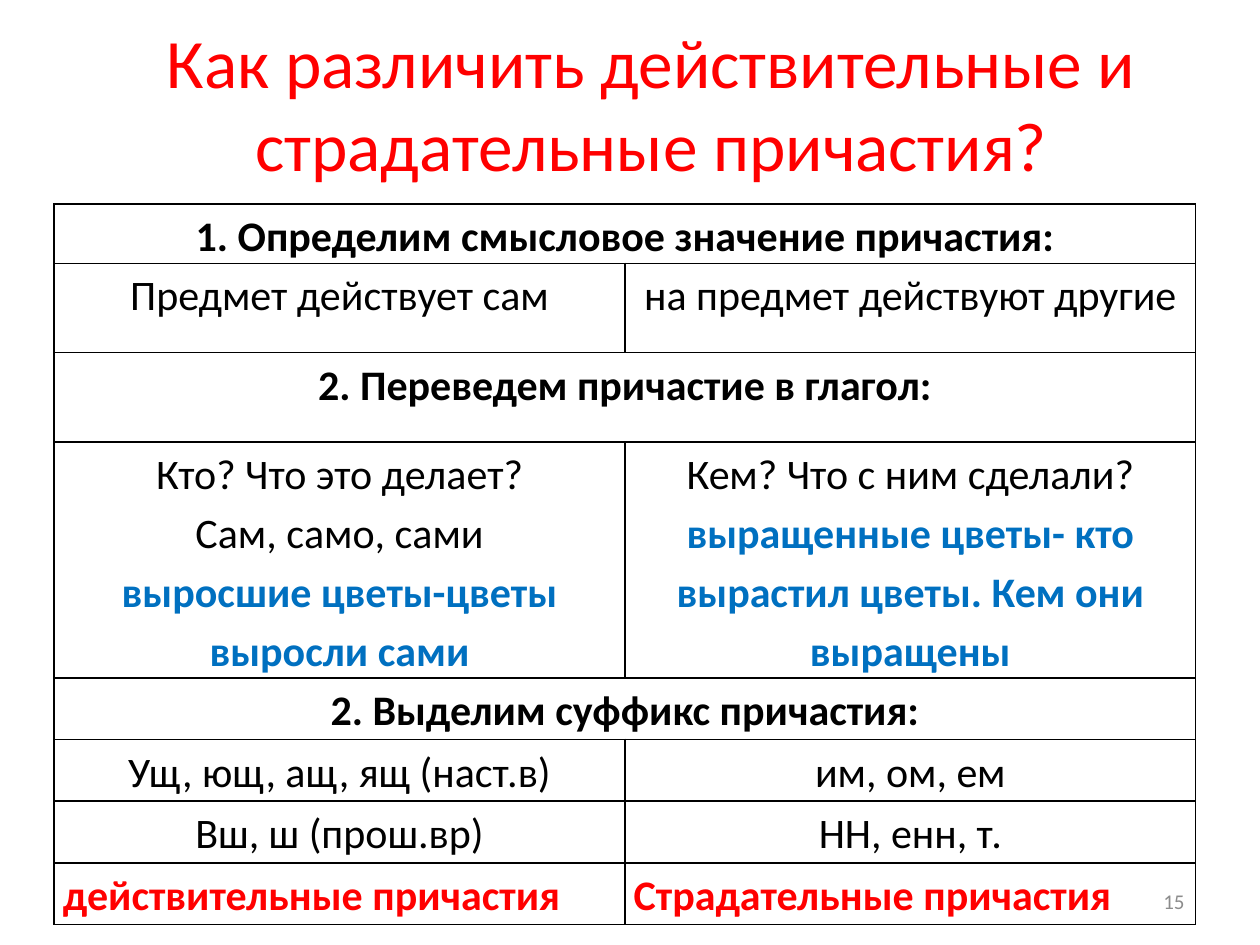
from lxml.etree import SubElement
from pptx import Presentation
from pptx.dml.color import RGBColor
from pptx.enum.text import MSO_ANCHOR, PP_ALIGN
from pptx.oxml.ns import qn
from pptx.util import Inches, Pt

BLACK, RED, BLUE, GRAY = "000000", "FF0000", "0070C0", "8C8C8C"


def write(p, text, size=24, color=BLACK, bold=False, align=PP_ALIGN.CENTER, spacing=None):
    p.alignment = align
    if spacing:
        p.line_spacing = spacing
    r = p.add_run()
    r.text = text
    r.font.name = "Calibri"
    r.font.size = Pt(size)
    r.font.bold = bold
    r.font.color.rgb = RGBColor.from_string(color)


def add_borders(cell):
    tcPr = cell._tc.get_or_add_tcPr()
    for side in ("lnL", "lnR", "lnT", "lnB"):
        ln = SubElement(tcPr, qn(f"a:{side}"), w=str(Pt(1)))
        fill = SubElement(ln, qn("a:solidFill"))
        SubElement(fill, qn("a:srgbClr"), val=BLACK)


prs = Presentation()
prs.slide_width, prs.slide_height = Inches(10), Inches(7.5)
s = prs.slides.add_slide(prs.slide_layouts[6])

# Title: the bottom inset lifts the two lines clear of the table
tf = s.shapes.add_textbox(Inches(0.67), Inches(0.52), Inches(9), Inches(1.25)).text_frame
tf.word_wrap = True
tf.vertical_anchor = MSO_ANCHOR.MIDDLE
tf.margin_bottom = Inches(0.72)
write(tf.paragraphs[0], "Как различить действительные и страдательные причастия?",
      size=39.6, color=RED)

# Each row: height and cells; a single cell is a heading across both columns
bold_blue = dict(color=BLUE, bold=True)
conclusion = dict(color=RED, bold=True, align=PP_ALIGN.LEFT)
heading = dict(bold=True)
rows = [
    (0.47, [[("1. Определим смысловое значение причастия:", heading)]]),
    (0.71, [[("Предмет действует сам", {})], [("на предмет действуют другие", {})]]),
    (0.71, [[("2. Переведем причастие в глагол:", heading)]]),
    (1.87, [[("Кто? Что это делает?", {}),
             ("Сам, само, сами", {}),
             ("выросшие цветы-цветы выросли сами", bold_blue)],
            [("Кем? Что с ним сделали?", {}),
             ("выращенные цветы- кто вырастил цветы. Кем они выращены", bold_blue)]]),
    (0.49, [[("2. Выделим суффикс причастия:", heading)]]),
    (0.49, [[("Ущ, ющ, ащ, ящ (наст.в)", {})], [("им, ом, ем", {})]]),
    (0.49, [[("Вш, ш (прош.вр)", {})], [("НН, енн, т.", {})]]),
    (0.49, [[("действительные причастия", conclusion)],
            [("Страдательные причастия", conclusion)]]),
]
table = s.shapes.add_table(len(rows), 2, Inches(0.43), Inches(1.62), Inches(9.06),
                           Inches(sum(height for height, _ in rows))).table
table.first_row = table.horz_banding = False
for i, (height, cells) in enumerate(rows):
    table.rows[i].height = Inches(height)
    for j in range(2):
        cell = table.cell(i, j)
        add_borders(cell)
        cell.fill.background()
        cell.margin_left = cell.margin_right = Inches(0.07)
        cell.margin_top = cell.margin_bottom = 0
    if len(cells) == 1:
        table.cell(i, 0).merge(table.cell(i, 1))
    for j, paragraphs in enumerate(cells):
        tf = table.cell(i, j).text_frame
        for n, (text, style) in enumerate(paragraphs):
            p = tf.add_paragraph() if n else tf.paragraphs[0]
            write(p, text, spacing=1.15, **style)

# Slide number
tf = s.shapes.add_textbox(Inches(7.17), Inches(6.95), Inches(2.33), Inches(0.4)).text_frame
tf.word_wrap = True
tf.vertical_anchor = MSO_ANCHOR.MIDDLE
write(tf.paragraphs[0], "15", size=12, color=GRAY, align=PP_ALIGN.RIGHT)

prs.save("out.pptx")
